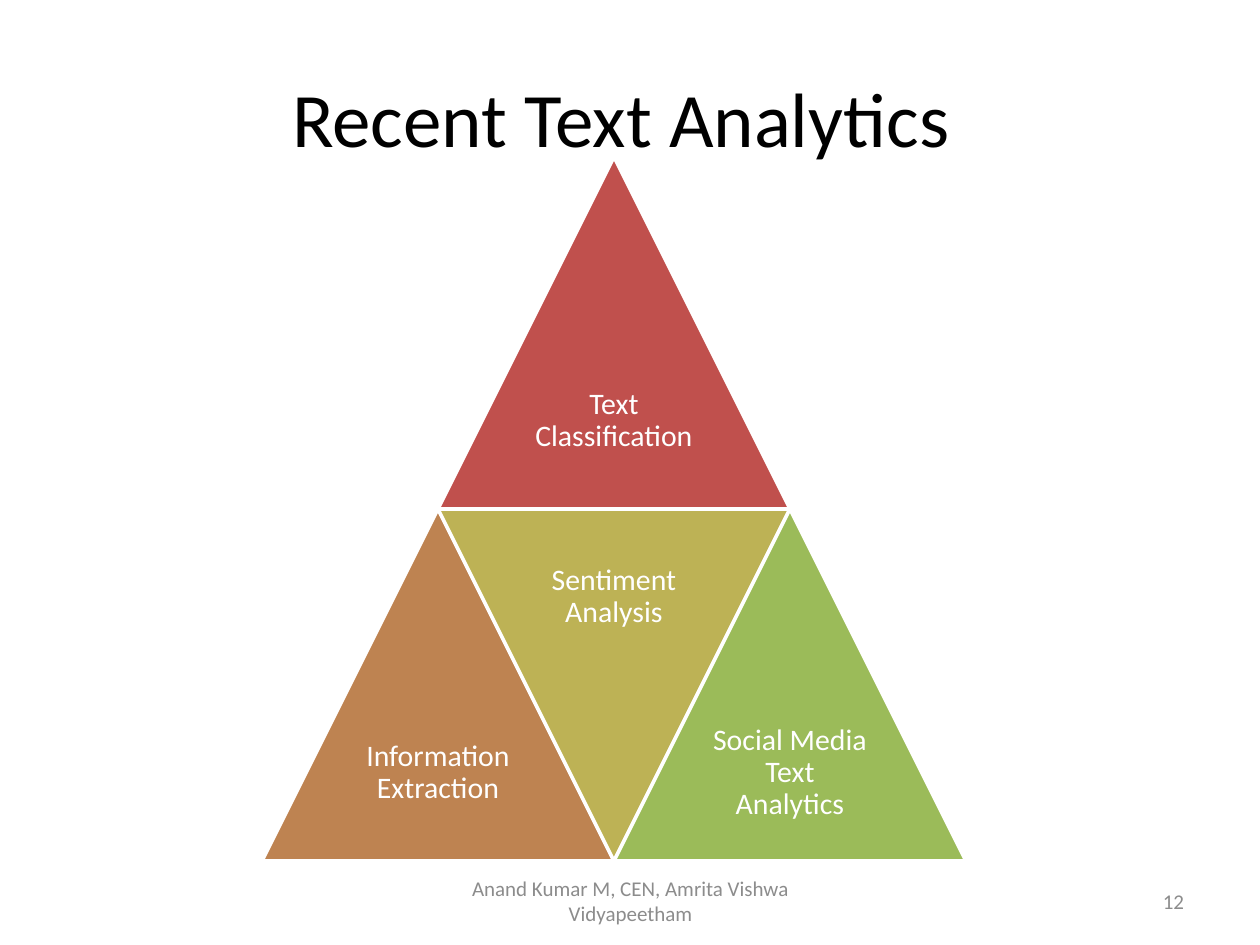
from pptx import Presentation
from pptx.dml.color import RGBColor
from pptx.enum.shapes import MSO_SHAPE
from pptx.enum.text import MSO_ANCHOR, PP_ALIGN
from pptx.util import Emu, Pt

PX_PER_INCH = 126
WHITE = "FFFFFF"
GREY = "8C8C8C"


def px(length):
    """Turn a length in px into EMU."""
    return Emu(round(length * 914400 / PX_PER_INCH))


def color(hex_code):
    """Turn a hex string into a colour."""
    return RGBColor.from_string(hex_code)


def apply(target, formats):
    """Set each attribute in the dict of format values."""
    for attribute, value in formats.items():
        setattr(target, attribute, value)


def add_text(slide, box, wording, size, hex_code, align=PP_ALIGN.CENTER,
             insets=(13, 6), spacing=None):
    """Place one vertically centred paragraph in the box."""
    frame = slide.shapes.add_textbox(*map(px, box)).text_frame
    side, end = map(px, insets)
    apply(frame, {"word_wrap": True, "vertical_anchor": MSO_ANCHOR.MIDDLE,
                  "margin_left": side, "margin_right": side,
                  "margin_top": end, "margin_bottom": end})
    paragraph = frame.paragraphs[0]
    apply(paragraph, {"alignment": align, **(spacing or {})})
    run = paragraph.add_run()
    run.text = wording
    apply(run.font, {"name": "Calibri", "size": Pt(size)})
    run.font.color.rgb = color(hex_code)


def add_topic(slide, box, topic, hex_code, inverted):
    """Draw one triangle with its label in the widest part."""
    left, top, side, _ = box
    triangle = slide.shapes.add_shape(MSO_SHAPE.ISOSCELES_TRIANGLE, *map(px, box))
    triangle.rotation = 180 if inverted else 0
    triangle.shadow.inherit = False
    triangle.fill.solid()
    triangle.fill.fore_color.rgb = color(hex_code)
    triangle.line.color.rgb = color(WHITE)
    triangle.line.width = Pt(2)
    half = side // 2
    label_top = top if inverted else top + half
    add_text(slide, (left + side // 4, label_top, half, half), topic, 17, WHITE,
             insets=(8, 8), spacing={"line_spacing": 0.9, "space_after": Pt(6)})


def add_pyramid(slide, box):
    """Fill the box with four triangles, the central one inverted."""
    left, top, size, _ = box
    side = size // 2
    topics = [
        ("Text Classification", "C0504D", 1, 0, False),
        ("Information Extraction", "BE8351", 0, 1, False),
        ("Sentiment Analysis", "BDB255", 1, 1, True),
        ("Social Media Text Analytics", "9BBB59", 2, 1, False),
    ]
    for topic, hex_code, half_steps, row, inverted in topics:
        place = (left + half_steps * side // 2, top + row * side, side, side)
        add_topic(slide, place, topic, hex_code, inverted)


def add_footer(slide, box):
    """Place the author line and the slide number in the footer band."""
    left, top, width, height = box
    add_text(slide, (left + 368, top, 399, height),
             "Anand Kumar M, CEN, Amrita Vishwa Vidyapeetham", 12, GREY)
    add_text(slide, (left + width - 294, top, 294, height), "12", 12, GREY,
             PP_ALIGN.RIGHT)


def main():
    """Build and save the slide."""
    deck = Presentation()
    apply(deck, {"slide_width": px(1260), "slide_height": px(945)})
    slide = deck.slides.add_slide(deck.slide_layouts[6])
    add_text(slide, (63, 38, 1134, 158), "Recent Text Analytics ", 44, "000000")
    add_footer(slide, (63, 876, 1134, 50))
    add_pyramid(slide, (262, 157, 704, 704))
    deck.save("out.pptx")


if __name__ == "__main__":
    main()
